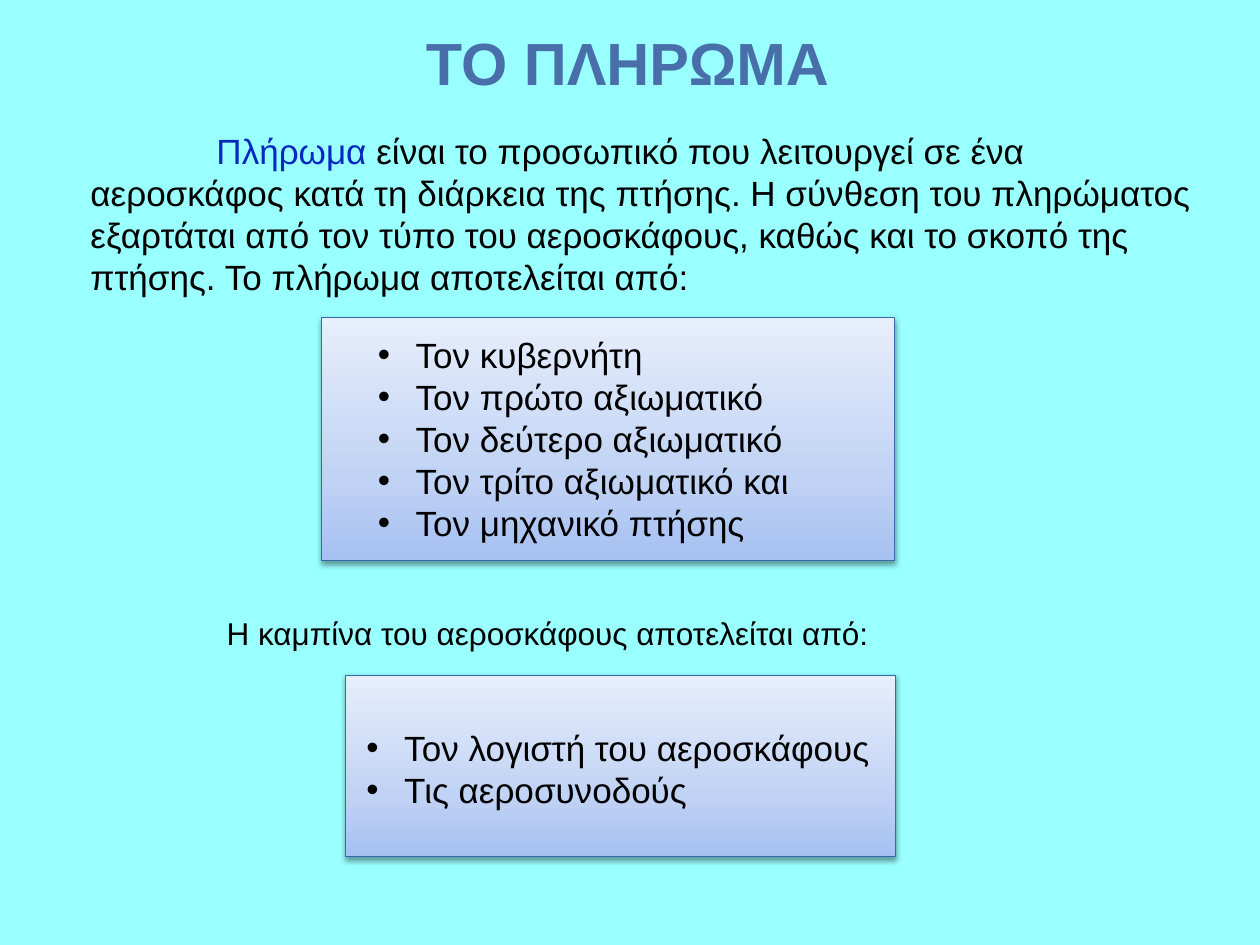
from copy import deepcopy
from pptx import Presentation
from pptx.dml.color import RGBColor
from pptx.enum import shapes, text
from pptx.oxml import parse_xml
from pptx.oxml.ns import nsdecls
from pptx.util import Inches, Pt


def color(value):
    return RGBColor.from_string(value)


def write(place, lines, formats, bullet=False):
    box = slide.shapes.add_textbox(*map(Inches, place))
    frame = box.text_frame
    frame.word_wrap = True
    for index, runs in enumerate(lines):
        paragraph = frame.paragraphs[0] if index == 0 else frame.add_paragraph()
        properties = paragraph._p.get_or_add_pPr()
        if bullet:
            properties.set("marL", str(Inches(0.3)))
            properties.set("indent", str(-Inches(0.3)))
            for tag in ('buFont {} typeface="Arial"', 'buChar {} char="•"'):
                properties.append(parse_xml(f"<a:{tag.format(nsdecls('a'))}/>"))
        elif runs[0][0].startswith("\t"):
            properties.append(parse_xml(
                f'<a:tabLst {nsdecls("a")}><a:tab pos="{Inches(1)}" algn="l"/></a:tabLst>'))
        for wording, hue in runs:
            run = paragraph.add_run()
            run.text = wording
            run.font.color.rgb = color(hue)
            for name, value in formats.items():
                setattr(run.font, name, value)
    return frame


deck = Presentation()
deck.slide_width, deck.slide_height = Inches(10), Inches(7.5)
slide = deck.slides.add_slide(deck.slide_layouts[6])
slide.background.fill.solid()
slide.background.fill.fore_color.rgb = color("99FFFF")

heading = {"name": "Arial", "size": Pt(34), "bold": True}
body = {"name": "Arial", "size": Pt(20)}
note = {"name": "Arial", "size": Pt(18)}

title = write((3.07, 0, 3.82, 0.82), [[("ΤΟ ΠΛΗΡΩΜΑ", "486FAA")]], heading)
title.vertical_anchor = text.MSO_ANCHOR.BOTTOM
title.paragraphs[0].alignment = text.PP_ALIGN.CENTER

definition = (
    "είναι το προσωπικό που λειτουργεί σε ένα αεροσκάφος κατά τη διάρκεια της πτήσης. "
    "Η σύνθεση του πληρώματος εξαρτάται από τον τύπο του αεροσκάφους, καθώς και το "
    "σκοπό της πτήσης. Το πλήρωμα αποτελείται από:"
)
write((0.62, 0.98, 9.07, 1.17), [[("\tΠλήρωμα ", "0528BF"), (definition, "000000")]], body)
write((0.7, 4.82, 8.25, 0.71),
      [[("\tΗ καμπίνα του αεροσκάφους αποτελείται από:", "000000")]], note)

crew = ["Τον κυβερνήτη", "Τον πρώτο αξιωματικό", "Τον δεύτερο αξιωματικό",
        "Τον τρίτο αξιωματικό και", "Τον μηχανικό πτήσης"]
cabin = ["Τον λογιστή του αεροσκάφους", "Τις αεροσυνοδούς"]
shades = [(0, "A6C0F2"), (0.35, "C1D3F4"), (1, "E7EEFC")]

for panel_place, list_place, members in (
    ((2.55, 2.52, 4.55, 1.93), (2.9, 2.6, 3.73, 1.78), crew),
    ((2.74, 5.36, 4.37, 1.44), (2.81, 5.72, 5.52, 0.77), cabin),
):
    panel = slide.shapes.add_shape(shapes.MSO_SHAPE.RECTANGLE, *map(Inches, panel_place))
    panel.fill.gradient()
    panel.fill.gradient_angle = 90
    first = panel.fill._fill._gradFill.gsLst[0]
    first.addnext(deepcopy(first))
    for stop, (position, hue) in zip(panel.fill.gradient_stops, shades):
        stop.position = position
        stop.color.rgb = color(hue)
    panel.line.color.rgb = color("366BA5")
    panel.line.width = Pt(0.75)
    panel.shadow.inherit = False
    panel._element.spPr.find("{*}effectLst").append(parse_xml(
        f'<a:outerShdw {nsdecls("a")} blurRad="{Pt(3.1)}" dist="{Pt(1.6)}" dir="5400000" '
        'rotWithShape="0"><a:srgbClr val="000000"><a:alpha val="38000"/></a:srgbClr>'
        '</a:outerShdw>'))
    write(list_place, [[(member, "000000")] for member in members], body, bullet=True)

deck.save("out.pptx")
